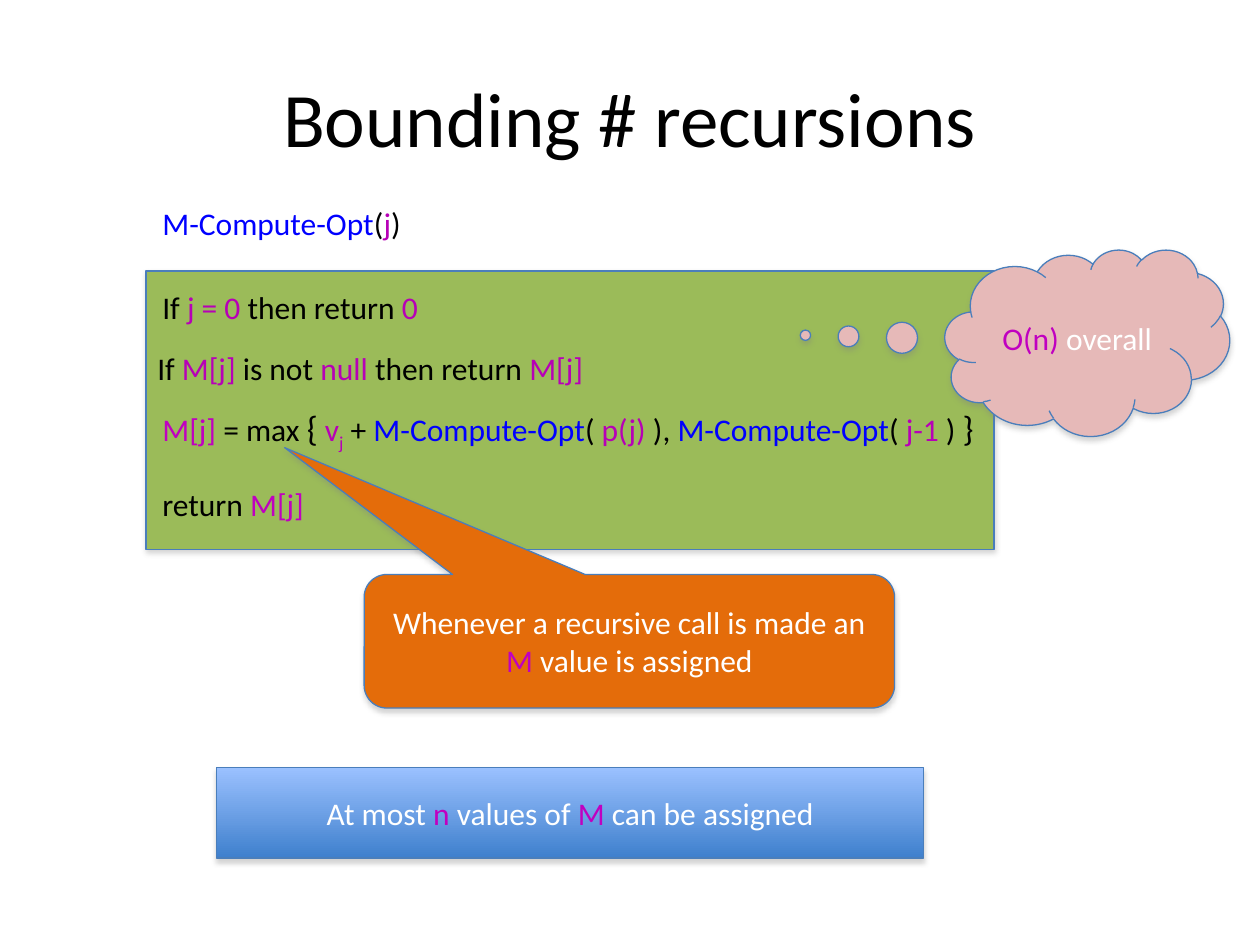
from dataclasses import dataclass

from lxml import etree
from pptx import Presentation
from pptx.dml.color import RGBColor
from pptx.enum.shapes import MSO_SHAPE
from pptx.enum.text import MSO_ANCHOR, MSO_AUTO_SIZE, PP_ALIGN
from pptx.oxml.ns import qn
from pptx.util import Inches, Pt

RECTANGLE = MSO_SHAPE.RECTANGLE
ROUNDED_CALLOUT = MSO_SHAPE.ROUNDED_RECTANGULAR_CALLOUT
CLOUD_CALLOUT = MSO_SHAPE.CLOUD_CALLOUT
CENTER = PP_ALIGN.CENTER
MIDDLE = MSO_ANCHOR.MIDDLE
FIT_SHAPE = MSO_AUTO_SIZE.SHAPE_TO_FIT_TEXT

FONT = "Calibri"
COLORS = {
    "black": "000000",
    "white": "FFFFFF",
    "call": "0000FF",
    "variable": "B700B7",
    "memo": "C000C0",
    "green": "9BBB59",
    "orange": "E46C0A",
    "pink": "E6B9B8",
    "light blue": "9BC1FF",
    "dark blue": "3F80CD",
    "outline": "4A7EBB",
    "shadow": "808080",
}


@dataclass(frozen=True)
class Span:
    text: str
    color: str = "black"
    size: int = 18
    subscript: bool = False


@dataclass(frozen=True)
class Box:
    left: float
    top: float
    width: float
    height: float

    def lengths(self) -> tuple:
        return tuple(Inches(v) for v in (self.left, self.top, self.width, self.height))


@dataclass(frozen=True)
class CodeLine:
    box: Box
    spans: tuple[Span, ...]


@dataclass(frozen=True)
class Panel:
    kind: int
    box: Box
    fills: tuple[str, ...]
    spans: tuple[Span, ...] = ()
    adjustments: tuple[float, ...] = ()


TITLE = Span("Bounding # recursions", size=44)
CALL = Span("M-Compute-Opt", "call")

CODE_PANEL = Panel(RECTANGLE, Box(1.16, 2.15, 6.73, 2.21), ("green",))

CODE_LINES = (
    CodeLine(Box(1.19, 1.57, 2.12, 0.4),
             (CALL, Span("("), Span("j", "variable"), Span(")"))),
    CodeLine(Box(1.19, 2.24, 2.25, 0.4),
             (Span("If "), Span("j = 0 ", "variable"),
              Span("then return "), Span("0", "variable"))),
    CodeLine(Box(1.19, 3.18, 6.71, 0.44),
             (Span("M[j] ", "memo"), Span("= max "), Span("{", size=20), Span(" "),
              Span("v", "variable"), Span("j", "variable", subscript=True), Span(" + "),
              CALL, Span("( "), Span("p(j)", "variable"), Span(" ), "),
              CALL, Span("( "), Span("j-1", "variable"), Span(" ) "),
              Span("}", size=20))),
    CodeLine(Box(1.15, 2.72, 3.61, 0.4),
             (Span("If "), Span("M[j] ", "variable"), Span("is not "),
              Span("null ", "variable"), Span("then return "), Span("M[j]", "variable"))),
    CodeLine(Box(1.19, 3.8, 1.34, 0.4),
             (Span("return "), Span("M[j]", "memo"))),
)

REMARKS = (
    Panel(ROUNDED_CALLOUT, Box(2.89, 4.56, 4.21, 1.06), ("orange",),
          (Span("Whenever a recursive call is made an ", "white"), Span("M", "memo"),
           Span(" value is assigned", "white")),
          (-0.65, -1.45, 0.17)),
    Panel(RECTANGLE, Box(1.72, 6.09, 5.61, 0.72), ("light blue", "dark blue"),
          (Span("At most ", "white"), Span("n", "memo"), Span(" values of ", "white"),
           Span("M", "memo"), Span(" can be assigned", "white"))),
    Panel(CLOUD_CALLOUT, Box(7.5, 1.98, 2.26, 1.48), ("pink",),
          (Span("O(n) ", "memo"), Span("overall", "white")),
          (-0.99, -0.04)),
)


def rgb(name: str) -> RGBColor:
    """Return the named colour."""
    return RGBColor.from_string(COLORS[name])


def write_spans(paragraph, spans: tuple[Span, ...]) -> None:
    """Write the spans as formatted runs of the paragraph."""
    for span in spans:
        run = paragraph.add_run()
        run.text = span.text
        run.font.name = FONT
        run.font.size = Pt(span.size)
        run.font.color.rgb = rgb(span.color)
        if span.subscript:
            run._r.get_or_add_rPr().set("baseline", "-25000")


def center_text(text_frame, spans: tuple[Span, ...]) -> None:
    """Write wrapped text in the middle of its frame."""
    text_frame.word_wrap = True
    text_frame.vertical_anchor = MIDDLE
    text_frame.paragraphs[0].alignment = CENTER
    write_spans(text_frame.paragraphs[0], spans)


def add_shadow(shape) -> None:
    """Give the shape a soft shadow below it."""
    shape.shadow.inherit = False
    effects = shape._element.spPr.find(qn("a:effectLst"))
    shadow = etree.SubElement(
        effects, qn("a:outerShdw"), blurRad=str(Pt(3.1)), dist=str(Pt(1.8)),
        dir="5400000", rotWithShape="0")
    color = etree.SubElement(shadow, qn("a:srgbClr"), val=COLORS["shadow"])
    etree.SubElement(color, qn("a:alpha"), val="35000")


def add_panel(slide, panel: Panel) -> None:
    """Draw a filled, outlined panel with its centred text."""
    shape = slide.shapes.add_shape(panel.kind, *panel.box.lengths())
    for index, value in enumerate(panel.adjustments):
        shape.adjustments[index] = value
    if len(panel.fills) == 1:
        shape.fill.solid()
        shape.fill.fore_color.rgb = rgb(panel.fills[0])
    else:
        shape.fill.gradient()
        shape.fill.gradient_angle = 270
        for stop, name in zip(shape.fill.gradient_stops, panel.fills):
            stop.color.rgb = rgb(name)
    shape.line.color.rgb = rgb("outline")
    shape.line.width = Pt(0.75)
    add_shadow(shape)
    if panel.spans:
        center_text(shape.text_frame, panel.spans)


def add_code_line(slide, line: CodeLine) -> None:
    """Draw one unwrapped line of the algorithm."""
    text_frame = slide.shapes.add_textbox(*line.box.lengths()).text_frame
    text_frame.word_wrap = False
    text_frame.auto_size = FIT_SHAPE
    write_spans(text_frame.paragraphs[0], line.spans)


def main() -> None:
    """Build the slide and save it."""
    presentation = Presentation()
    presentation.slide_width = Inches(10)
    presentation.slide_height = Inches(7.5)
    slide = presentation.slides.add_slide(presentation.slide_layouts[6])
    title = slide.shapes.add_textbox(*Box(0.5, 0.3, 9, 1.25).lengths())
    center_text(title.text_frame, (TITLE,))
    add_panel(slide, CODE_PANEL)
    for line in CODE_LINES:
        add_code_line(slide, line)
    for remark in REMARKS:
        add_panel(slide, remark)
    presentation.save("out.pptx")


if __name__ == "__main__":
    main()
